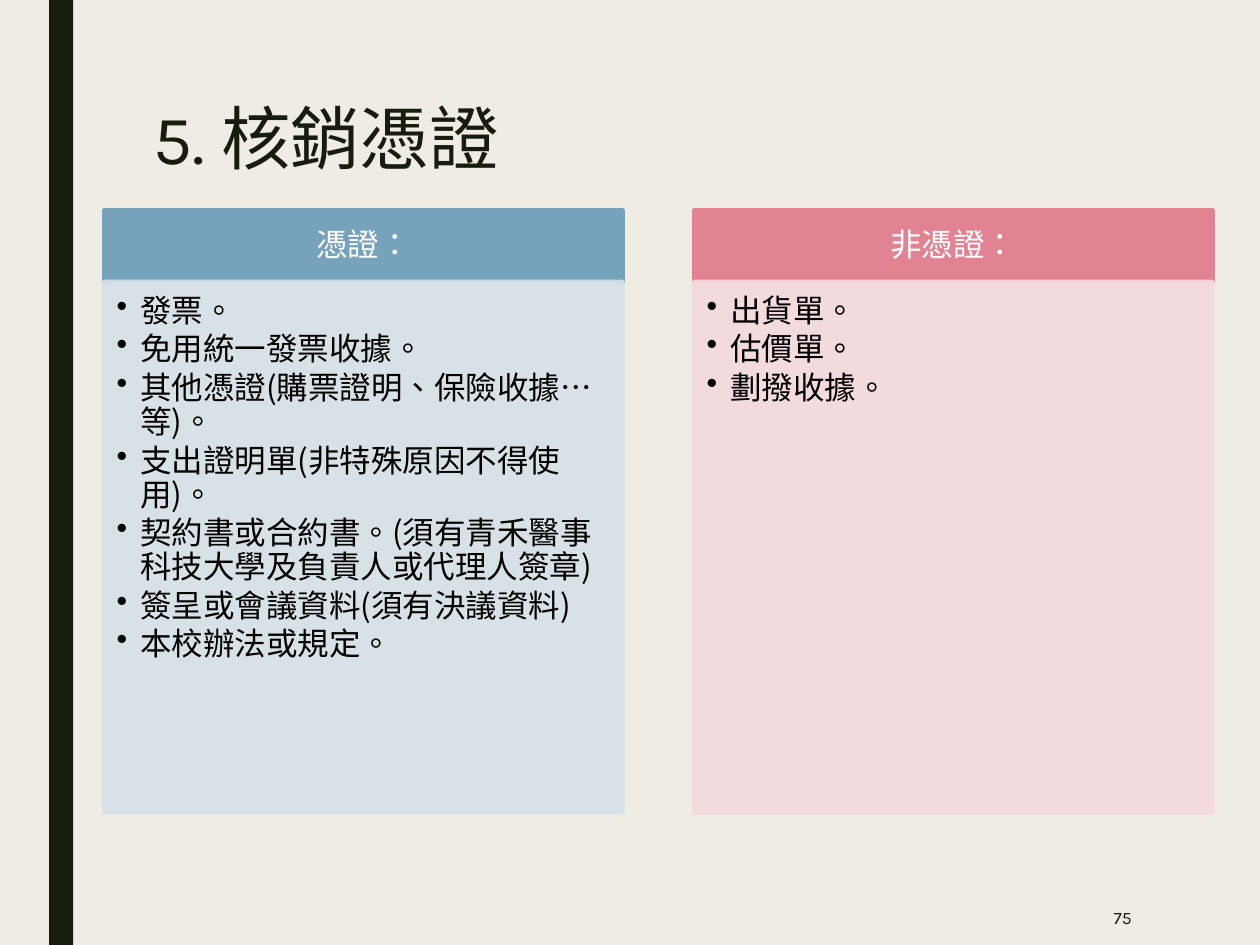
import lxml.etree
import pptx
import pptx.dml.color
import pptx.enum.shapes
import pptx.enum.text
import pptx.oxml.ns
import pptx.util

Pt = pptx.util.Pt
ALIGN = pptx.enum.text.PP_ALIGN
ANCHOR = pptx.enum.text.MSO_ANCHOR
CJK_FONT = "Noto Sans CJK SC"
INK = "191B0E"

PANELS = [
    ("憑證：", "77A2BB", "D6E0E7", [
        "發票。",
        "免用統一發票收據。",
        "其他憑證(購票證明、保險收據…等)。",
        "支出證明單(非特殊原因不得使用)。",
        "契約書或合約書。(須有青禾醫事科技大學及負責人或代理人簽章)",
        "簽呈或會議資料(須有決議資料)",
        "本校辦法或規定。",
    ]),
    ("非憑證：", "E28394", "F4D9DC", ["出貨單。", "估價單。", "劃撥收據。"]),
]


def rgb(code):
    """Return the colour for a hex string."""
    return pptx.dml.color.RGBColor.from_string(code)


def add_child(parent, tag, **attributes):
    """Append a DrawingML element with the given attributes."""
    child = lxml.etree.SubElement(parent, pptx.oxml.ns.qn(tag))
    for key, value in attributes.items():
        child.set(key, value)
    return child


def add_block(slide, left, top, width, height, color, border=0, alpha=100):
    """Add a filled rectangle, with an optional border of the same colour."""
    block = slide.shapes.add_shape(
        pptx.enum.shapes.MSO_SHAPE.RECTANGLE, Pt(left), Pt(top), Pt(width), Pt(height))
    block.shadow.inherit = False
    block.fill.solid()
    block.fill.fore_color.rgb = rgb(color)
    if border:
        block.line.color.rgb = rgb(color)
        block.line.width = Pt(border)
    else:
        block.line.fill.background()
    if alpha < 100:
        for swatch in block._element.spPr.iter(pptx.oxml.ns.qn("a:srgbClr")):
            add_child(swatch, "a:alpha", val=str(alpha * 1000))
    return block


def write_text(holder, lines, size, color, font=CJK_FONT, align=ALIGN.LEFT,
               anchor=ANCHOR.TOP, insets=(7.2, 3.6, 7.2, 3.6), spacing=None,
               after=0, bullet=None, indent=13.5):
    """Write paragraphs of one format into a shape or text box."""
    frame = holder.text_frame
    frame.word_wrap = True
    frame.vertical_anchor = anchor
    (frame.margin_left, frame.margin_top,
     frame.margin_right, frame.margin_bottom) = map(Pt, insets)
    for index, line in enumerate(lines):
        paragraph = frame.add_paragraph() if index else frame.paragraphs[0]
        paragraph.alignment = align
        paragraph.line_spacing = spacing
        paragraph.space_after = Pt(after)
        if bullet:
            properties = paragraph._p.get_or_add_pPr()
            properties.set("marL", str(Pt(indent)))
            properties.set("indent", str(-Pt(indent)))
            add_child(properties, "a:buChar", char=bullet)
        run = paragraph.add_run()
        run.text = line
        run.font.size = Pt(size)
        run.font.name = font
        run.font.color.rgb = rgb(color)
        run_properties = run._r.get_or_add_rPr()
        run_properties.set("lang", "zh-TW")
        add_child(run_properties, "a:ea", typeface=CJK_FONT)


def add_label(slide, left, top, width, height, text, **style):
    """Add a text box holding a single line."""
    label = slide.shapes.add_textbox(Pt(left), Pt(top), Pt(width), Pt(height))
    write_text(label, [text], **style)


def add_panel(slide, left, heading, heading_color, body_color, items):
    """Add a heading bar with a bulleted list below it."""
    top, width, heading_height, body_height = 120.2, 296, 41, 303
    bar = add_block(slide, left, top, width, heading_height, heading_color, border=2.75)
    write_text(bar, [heading], 18, "FFFFFF", align=ALIGN.CENTER,
               anchor=ANCHOR.MIDDLE, insets=(10, 5.8, 10, 5.8), spacing=0.9)
    body = add_block(slide, left, top + heading_height, width, body_height,
                     body_color, border=2.75, alpha=90)
    write_text(body, items, 18, "000000", insets=(7.2, 7.2, 10, 11.5),
               spacing=Pt(19.4), after=2.7, bullet="•")


def main():
    """Build and save the slide."""
    deck = pptx.Presentation()
    deck.slide_width, deck.slide_height = Pt(720), Pt(540)
    slide = deck.slides.add_slide(deck.slide_layouts[6])
    slide.background.fill.solid()
    slide.background.fill.fore_color.rgb = rgb("EFEDE3")

    add_block(slide, 28.1, 0, 13.7, 540, INK)
    add_label(slide, 80.6, 54, 567.4, 51.8, "5. 核銷憑證", size=39.6, color=INK,
              font="Karla", anchor=ANCHOR.BOTTOM, spacing=0.89)
    add_label(slide, 559.4, 508.3, 94.3, 31.7, "75", size=10, color=INK,
              font="Karla", align=ALIGN.RIGHT, anchor=ANCHOR.MIDDLE)
    for index, panel in enumerate(PANELS):
        add_panel(slide, 59.6 + index * 337.2, *panel)
    deck.save("out.pptx")


if __name__ == "__main__":
    main()
